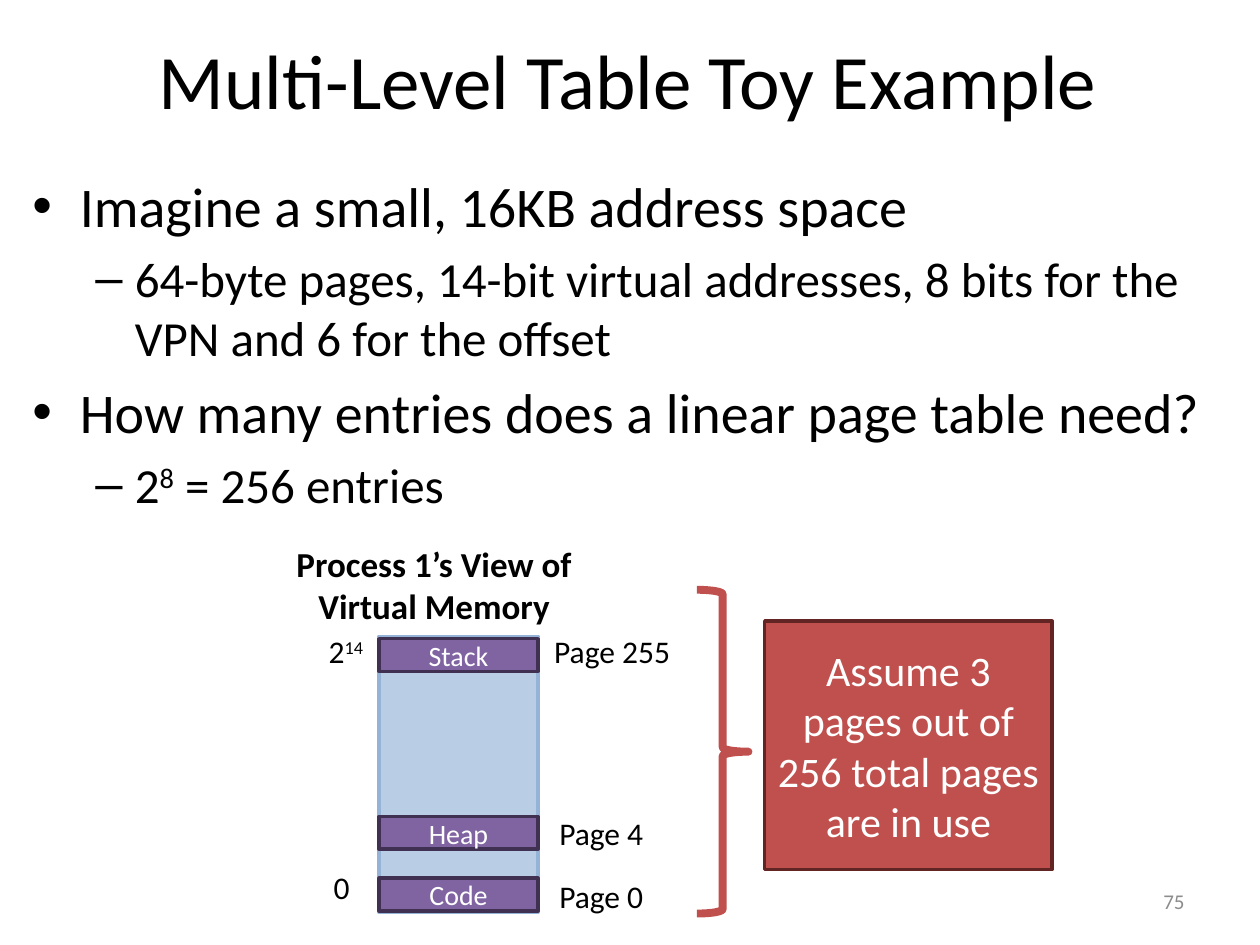
from lxml.etree import SubElement
from pptx import Presentation
from pptx.dml.color import RGBColor
from pptx.enum.shapes import MSO_SHAPE as Shape
from pptx.enum.text import MSO_ANCHOR as Anchor, PP_ALIGN as Align
from pptx.oxml.ns import qn
from pptx.util import Pt

TITLE = "Multi-Level Table Toy Example"
PAGE_NUMBER = "75"
# Text between carets is superscript.
BULLETS = [
    (0, "Imagine a small, 16KB address space"),
    (1, "64-byte pages, 14-bit virtual addresses, 8 bits for the VPN and 6 for the offset"),
    (0, "How many entries does a linear page table need?"),
    (1, "2^8^ = 256 entries"),
]
LEVELS = [
    {"bullet": "•", "size": 32, "margin": 27, "hanging": 27},
    {"bullet": "–", "size": 28, "margin": 58.5, "hanging": 22.5},
]
MEMORY_HEADING = ["Process 1’s View of", "Virtual Memory"]
SEGMENTS = [("Stack", 365), ("Heap", 466.6), ("Code", 501.8)]
# text, left, top, width
LABELS = [
    ("2^14^", 180.7, 357.8, 36),
    ("0", 183.6, 492.5, 23.8),
    ("Page 255", 309.6, 357.8, 81.4),
    ("Page 4", 312.5, 461.5, 63.4),
    ("Page 0", 312.5, 497.5, 63.4),
]
CALLOUT = "Assume 3 pages out of 256 total pages are in use"

MEMORY_LEFT, MEMORY_WIDTH = 216.7, 90.7
SEGMENT_HEIGHT = 18.7
LABEL_HEIGHT = 29


def color(hex_code):
    return RGBColor.from_string(hex_code)


def points(*lengths):
    return [Pt(length) for length in lengths]


def write(paragraph, text, size, text_color="000000", bold=False, align=Align.LEFT):
    """Fill a paragraph, raising the parts between carets."""
    paragraph.alignment = align
    for index, part in enumerate(text.split("^")):
        run = paragraph.add_run()
        run.text = part
        formats = {"name": "Calibri", "size": Pt(size), "bold": bold}
        for name, value in formats.items():
            setattr(run.font, name, value)
        run.font.color.rgb = color(text_color)
        if index % 2:
            run.font._element.set("baseline", "30000")


def add_text(slide, box, lines, size, wrap=False, anchor=Anchor.TOP, **formats):
    frame = slide.shapes.add_textbox(*points(*box)).text_frame
    frame.word_wrap = wrap
    frame.vertical_anchor = anchor
    for index, line in enumerate(lines):
        paragraph = frame.add_paragraph() if index else frame.paragraphs[0]
        write(paragraph, line, size, **formats)


def add_shape(slide, kind, box, fill, line, line_width=2, text="", size=16):
    shape = slide.shapes.add_shape(kind, *points(*box))
    shape.shadow.inherit = False
    if fill:
        shape.fill.solid()
        shape.fill.fore_color.rgb = color(fill)
    else:
        shape.fill.background()
    shape.line.color.rgb = color(line)
    shape.line.width = Pt(line_width)
    if text:
        frame = shape.text_frame
        frame.word_wrap = True
        frame.vertical_anchor = Anchor.MIDDLE
        write(frame.paragraphs[0], text, size, "FFFFFF", align=Align.CENTER)
    return shape


def add_title(slide):
    title = slide.shapes.title
    title.left, title.top, title.width, title.height = points(3.6, 0, 710.6, 90)
    title.text_frame.vertical_anchor = Anchor.MIDDLE
    write(title.text_frame.paragraphs[0], TITLE, 44, align=Align.CENTER)


def add_bullets(slide):
    frame = slide.shapes.add_textbox(*points(11.5, 94.3, 693.4, 213)).text_frame
    frame.word_wrap = True
    for index, (level, text) in enumerate(BULLETS):
        style = LEVELS[level]
        paragraph = frame.add_paragraph() if index else frame.paragraphs[0]
        paragraph.level = level
        paragraph.space_before = Pt(0.2 * style["size"])
        write(paragraph, text, style["size"])
        properties = paragraph._p.get_or_add_pPr()
        properties.set("marL", str(Pt(style["margin"])))
        properties.set("indent", str(-Pt(style["hanging"])))
        SubElement(properties, qn("a:buFont"), typeface="Arial")
        SubElement(properties, qn("a:buChar"), char=style["bullet"])


def add_memory(slide):
    add_shape(slide, Shape.RECTANGLE, (MEMORY_LEFT, 363.6, MEMORY_WIDTH, 157.7),
              "B9CDE5", "95B3D7")
    add_text(slide, (161.3, 306.7, 173.5, 55.4), MEMORY_HEADING, 20,
             bold=True, align=Align.CENTER)
    for name, top in SEGMENTS:
        add_shape(slide, Shape.RECTANGLE, (MEMORY_LEFT, top, MEMORY_WIDTH, SEGMENT_HEIGHT),
                  "8064A2", "403152", text=name)
    for text, left, top, width in LABELS:
        add_text(slide, (left, top, width, LABEL_HEIGHT), [text], 18)


def add_callout(slide):
    brace = add_shape(slide, Shape.LEFT_BRACE, (398.2, 337, 29.5, 185), None, "C0504D", 4.5)
    brace.rotation = 180
    add_shape(slide, Shape.FLOWCHART_PROCESS, (437, 355, 164.2, 141.8),
              "C0504D", "632523", text=CALLOUT, size=24)


def main():
    presentation = Presentation()
    presentation.slide_width, presentation.slide_height = points(720, 540)
    slide = presentation.slides.add_slide(presentation.slide_layouts[5])
    add_title(slide)
    add_bullets(slide)
    add_text(slide, (516, 500.5, 168, 28.8), [PAGE_NUMBER], 12, wrap=True,
             anchor=Anchor.MIDDLE, text_color="8C8C8C", align=Align.RIGHT)
    add_memory(slide)
    add_callout(slide)
    presentation.save("out.pptx")


if __name__ == "__main__":
    main()
